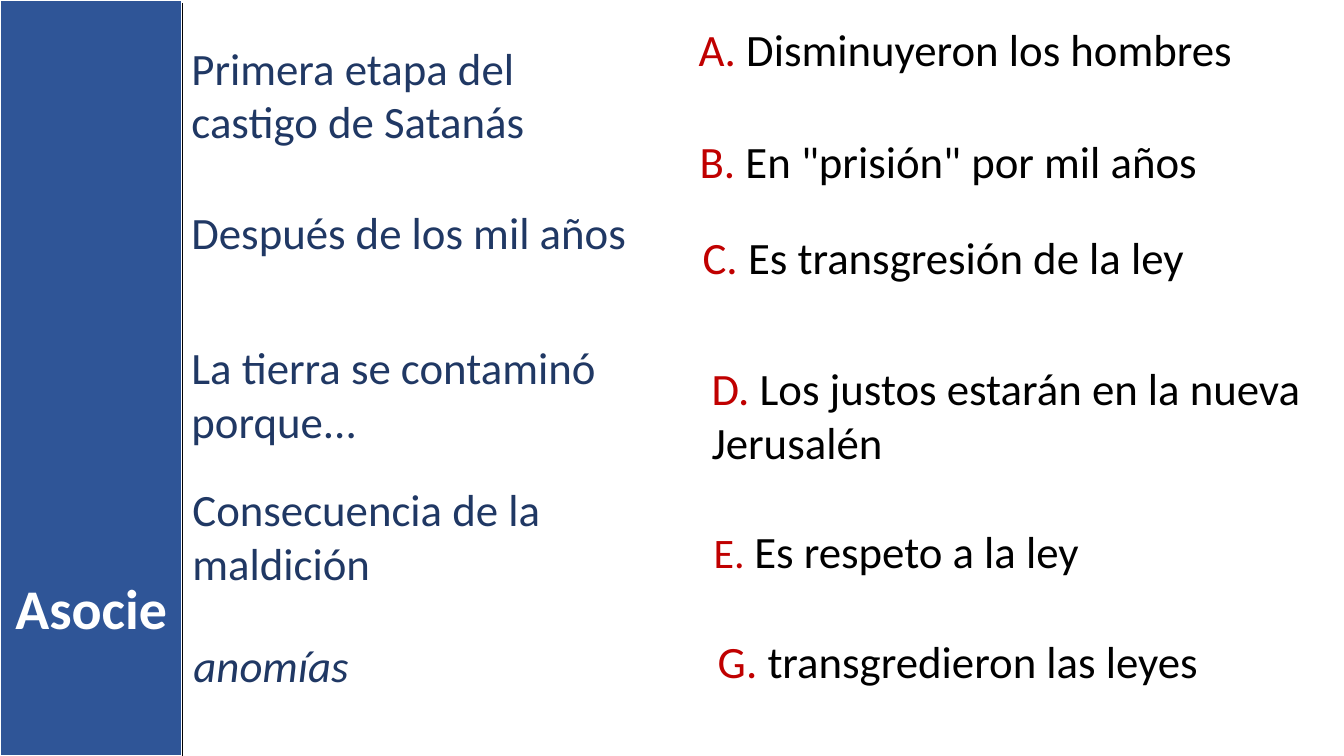
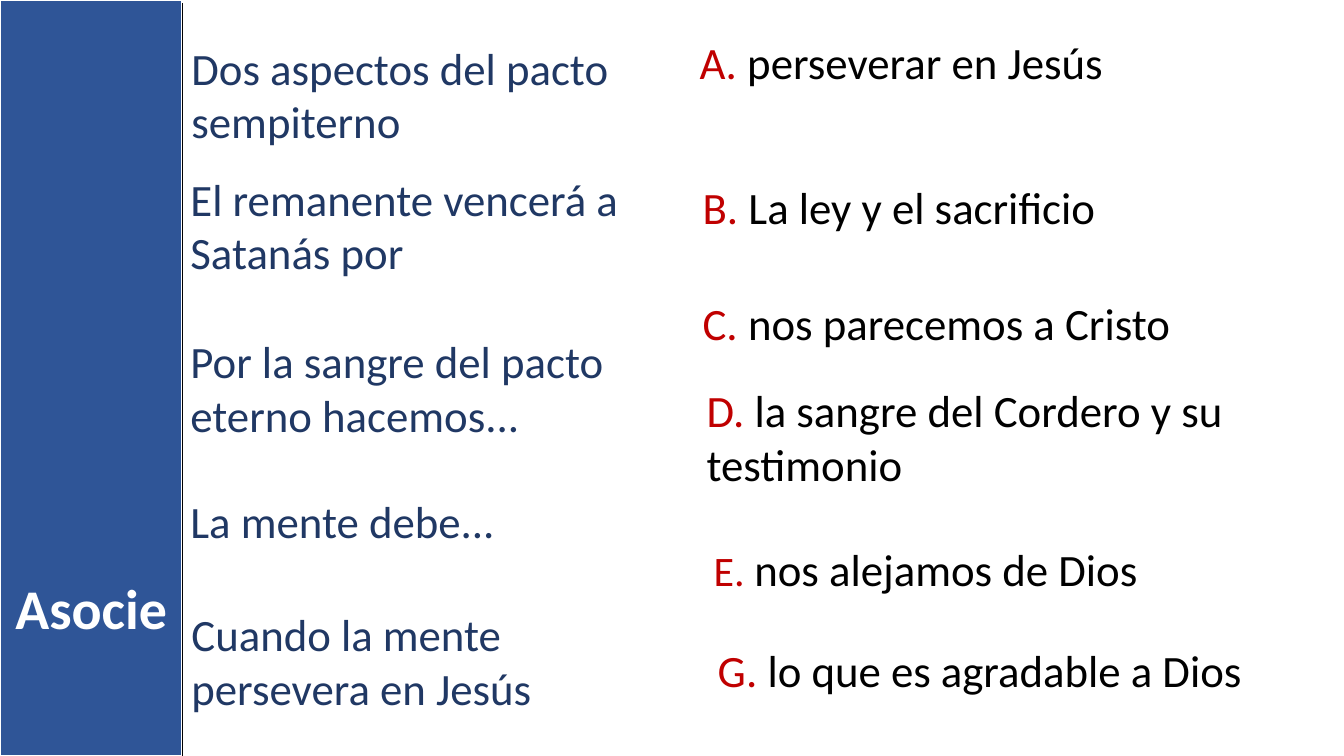
from lxml.etree import SubElement
from pptx import Presentation
from pptx.dml.color import RGBColor
from pptx.enum.shapes import MSO_CONNECTOR as Connector, MSO_SHAPE as Shape
from pptx.enum.text import MSO_AUTO_SIZE as AutoSize, PP_ALIGN as Align
from pptx.oxml.ns import qn
from pptx.util import Inches, Pt

BAND_BLUE = RGBColor(0x2F, 0x55, 0x97)
PROMPT_NAVY = RGBColor(0x20, 0x38, 0x64)
LETTER_RED = RGBColor(0xC0, 0x00, 0x00)
WHITE = RGBColor(0xFF, 0xFF, 0xFF)
BLACK = RGBColor(0x00, 0x00, 0x00)

FONT = "Calibri"
SLIDE_WIDTH, SLIDE_HEIGHT = 13.33, 7.5
BAND_WIDTH = 1.81
ONE_LINE, TWO_LINES = 0.64, 1.18

EXERCISES = [
    {
        "prompts": [
            ("Primera etapa del castigo de Satanás", 1.8, 0.35, 4.62, TWO_LINES),
            ("Después de los mil años", 1.8, 1.98, 4.62, ONE_LINE),
            ("La tierra se contaminó porque...", 1.8, 3.32, 4.85, TWO_LINES),
            ("Consecuencia de la maldición", 1.81, 4.73, 4.85, TWO_LINES),
            ("anomías", 1.82, 6.28, 3.51, ONE_LINE),
        ],
        "italic_prompts": {"anomías"},
        "answers": [
            ("A", "Disminuyeron los hombres", 6.83, 0.17, 6.3, ONE_LINE),
            ("B", 'En "prisión" por mil años', 6.84, 1.28, 5.42, ONE_LINE),
            ("C", "Es transgresión de la ley", 6.87, 2.23, 5.98, ONE_LINE),
            ("D", "Los justos estarán en la nueva Jerusalén", 6.96, 3.53, 6.04, TWO_LINES),
            ("E", "Es respeto a la ley", 6.98, 5.15, 5.75, ONE_LINE),
            ("G", "transgredieron las leyes", 7.02, 6.24, 5.82, ONE_LINE),
        ],
    },
    {
        "prompts": [
            ("Dos aspectos del pacto sempiterno", 1.8, 0.35, 4.62, TWO_LINES),
            ("El remanente vencerá a Satanás por", 1.79, 1.65, 4.62, TWO_LINES),
            ("Por la sangre del pacto eterno hacemos...", 1.79, 3.26, 4.36, TWO_LINES),
            ("La mente debe...", 1.79, 4.85, 4.61, ONE_LINE),
            ("Cuando la mente persevera en Jesús", 1.8, 5.97, 4.77, TWO_LINES),
        ],
        "italic_prompts": set(),
        "answers": [
            ("A", "perseverar en Jesús", 6.84, 0.3, 6.3, ONE_LINE),
            ("B", "La ley y el sacrificio", 6.87, 1.73, 4.52, ONE_LINE),
            ("C", "nos parecemos a Cristo", 6.87, 2.88, 5.98, ONE_LINE),
            ("D", "la sangre del Cordero y su testimonio", 6.91, 3.75, 6.04, TWO_LINES),
            ("E", "nos alejamos de Dios", 6.98, 5.33, 5.75, ONE_LINE),
            ("G", "lo que es agradable a Dios", 7.02, 6.33, 5.82, ONE_LINE),
        ],
    },
]


def add_run(paragraph, text, size=32, color=BLACK, bold=False, italic=False):
    run = paragraph.add_run()
    run.text = text
    font = run.font
    font.name = FONT
    font.size = Pt(size)
    font.color.rgb = color
    font.bold = bold
    font.italic = italic


class MatchingDeck:
    def __init__(self):
        self.presentation = Presentation()
        self.presentation.slide_width = Inches(SLIDE_WIDTH)
        self.presentation.slide_height = Inches(SLIDE_HEIGHT)
        self.slide = None

    def new_slide(self):
        blank_layout = self.presentation.slide_layouts[6]
        self.slide = self.presentation.slides.add_slide(blank_layout)

    def paragraph(self, left, top, width, height):
        box = self.slide.shapes.add_textbox(
            Inches(left), Inches(top), Inches(width), Inches(height))
        box.text_frame.word_wrap = True
        box.text_frame.auto_size = AutoSize.SHAPE_TO_FIT_TEXT
        return box.text_frame.paragraphs[0]

    def band(self):
        shape = self.slide.shapes.add_shape(
            Shape.RECTANGLE, 0, 0, Inches(BAND_WIDTH), Inches(SLIDE_HEIGHT))
        shape.shadow.inherit = False
        shape.fill.solid()
        shape.fill.fore_color.rgb = BAND_BLUE
        shape.line.color.rgb = WHITE
        shape.line.width = Pt(1.5)

    def title(self, text):
        paragraph = self.paragraph(0, 5.64, BAND_WIDTH, 0.77)
        paragraph.alignment = Align.CENTER
        add_run(paragraph, text, size=40, color=WHITE, bold=True)

    def divider(self):
        line = self.slide.shapes.add_connector(
            Connector.STRAIGHT, Inches(BAND_WIDTH), Inches(0.03),
            Inches(BAND_WIDTH), Inches(SLIDE_HEIGHT))
        line.line.color.rgb = BLACK
        line.line.width = Pt(1)
        SubElement(line._element.spPr, qn("a:effectLst"))

    def prompt(self, text, *place, italic=False):
        add_run(self.paragraph(*place), text, color=PROMPT_NAVY, italic=italic)

    def answer(self, letter, text, *place):
        paragraph = self.paragraph(*place)
        add_run(paragraph, f"{letter}. ", size=30 if letter == "E" else 32, color=LETTER_RED)
        add_run(paragraph, text)

    def exercise(self, prompts, italic_prompts, answers):
        self.new_slide()
        self.band()
        for text, *place in prompts:
            self.prompt(text, *place, italic=text in italic_prompts)
        for letter, text, *place in answers:
            self.answer(letter, text, *place)
        self.title("Asocie")
        self.divider()


def main():
    deck = MatchingDeck()
    for exercise in EXERCISES:
        deck.exercise(**exercise)
    deck.presentation.save("out.pptx")


if __name__ == "__main__":
    main()
